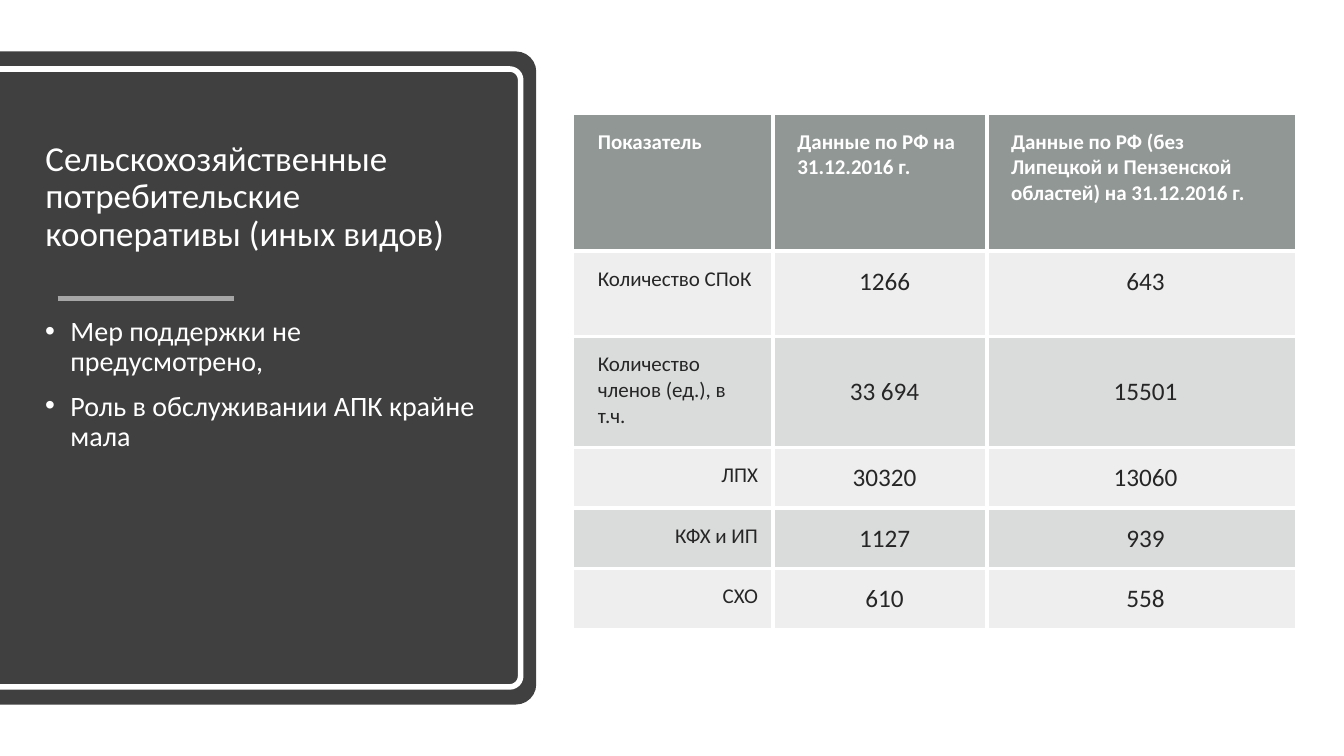
from dataclasses import dataclass

import lxml.etree
import pptx
import pptx.dml.color
import pptx.enum.shapes
import pptx.enum.text
import pptx.oxml.ns
import pptx.util

Pt = pptx.util.Pt
Inches = pptx.util.Inches
ALIGN = pptx.enum.text.PP_ALIGN
ANCHOR = pptx.enum.text.MSO_ANCHOR
qn = pptx.oxml.ns.qn
WIDTH, HEIGHT = Inches(13.33), Inches(7.5)


@dataclass(frozen=True)
class Theme:
    font: str = "Calibri"
    white: str = "FFFFFF"
    panel: str = "404040"
    rule: str = "A6A6A6"
    ink: str = "262626"
    header: str = "636B68"
    band: str = "878E8B"
    header_alpha: int = 70
    band_alphas: tuple[int, int] = (15, 30)
    title_size: int = 25
    body_size: int = 20
    label_size: int = 15
    value_size: int = 18
    heavy: int = 4
    border: int = 3


@dataclass(frozen=True)
class Box:
    left: float
    top: float
    width: float
    height: float

    def emu(self) -> tuple[int, int, int, int]:
        return across(self.left), down(self.top), across(self.width), down(self.height)


@dataclass(frozen=True)
class Panel:
    box: Box
    radius: float
    fill: str | None = None
    line: str | None = None


@dataclass(frozen=True)
class Row:
    height: float
    label: str
    values: tuple[str, str]
    align: ALIGN = ALIGN.LEFT
    anchor: ANCHOR = ANCHOR.TOP


THEME = Theme()
PANELS = (
    Panel(Box(0, 6.8, 39.9, 86.4), 0.038, fill=THEME.panel),
    Panel(Box(-0.26, 9.13, 39, 81.74), 0.021, line=THEME.white),
)
TITLE_BOX = Box(2.63, 14.27, 33.6, 23.73)
RULE_BOX = Box(4.28, 39.47, 13.12, 0)
BODY_BOX = Box(2.63, 41.33, 33.6, 44.4)
TABLE_BOX = Box(42.68, 15.07, 53.7, 67.74)
COLUMNS = (14.85, 15.9, 22.95)
TITLE = "Сельскохозяйственные потребительские кооперативы (иных видов)"
BULLETS = ("Мер поддержки не предусмотрено,", "Роль в обслуживании АПК крайне мала")
ROWS = (
    Row(18.13, "Показатель", ("Данные по РФ на 31.12.2016 г.",
        "Данные по РФ (без Липецкой и Пензенской областей) на 31.12.2016 г.")),
    Row(11.33, "Количество СПоК", ("1266", "643")),
    Row(14.67, "Количество членов (ед.), в т.ч.", ("33 694", "15501"), anchor=ANCHOR.MIDDLE),
    Row(7.87, "ЛПХ", ("30320", "13060"), ALIGN.RIGHT),
    Row(7.87, "КФХ и ИП", ("1127", "939"), ALIGN.RIGHT),
    Row(7.87, "СХО", ("610", "558"), ALIGN.RIGHT),
)


def across(share: float) -> int:
    return round(WIDTH * share / 100)


def down(share: float) -> int:
    return round(HEIGHT * share / 100)


def rgb(color: str) -> pptx.dml.color.RGBColor:
    return pptx.dml.color.RGBColor.from_string(color)


def add_run(p, text: str, size: int, color: str, bold: bool = False) -> None:
    r = p.add_run()
    r.text = text
    r.font.name, r.font.size, r.font.bold = THEME.font, Pt(size), bold
    r.font.color.rgb = rgb(color)


def add_panel(s, panel: Panel) -> None:
    """Draw a panel whose right corners are round by turning a shape a quarter."""
    left, top, width, height = panel.box.emu()
    shift = (width - height) // 2
    sp = s.shapes.add_shape(pptx.enum.shapes.MSO_SHAPE.ROUND_2_SAME_RECTANGLE,
                            left + shift, top - shift, height, width)
    sp.rotation = 90
    sp.shadow.inherit = False
    sp.adjustments[0], sp.adjustments[1] = panel.radius, 0
    if panel.fill:
        sp.fill.solid()
        sp.fill.fore_color.rgb = rgb(panel.fill)
    else:
        sp.fill.background()
    if panel.line:
        sp.line.color.rgb = rgb(panel.line)
        sp.line.width = Pt(THEME.heavy)
    else:
        sp.line.fill.background()


def set_title(s) -> None:
    sp = s.shapes.title
    sp.element.getparent().append(sp.element)
    sp.left, sp.top, sp.width, sp.height = TITLE_BOX.emu()
    tf = sp.text_frame
    tf.word_wrap, tf.vertical_anchor = True, ANCHOR.MIDDLE
    tf.auto_size = pptx.enum.text.MSO_AUTO_SIZE.NONE
    p = tf.paragraphs[0]
    p.alignment, p.line_spacing = ALIGN.LEFT, 0.9
    add_run(p, TITLE, THEME.title_size, THEME.white)


def add_rule(s) -> None:
    left, top, width, _ = RULE_BOX.emu()
    sp = s.shapes.add_connector(pptx.enum.shapes.MSO_CONNECTOR.STRAIGHT,
                                left, top, left + width, top)
    sp.line.color.rgb = rgb(THEME.rule)
    sp.line.width = Pt(THEME.heavy)
    lxml.etree.SubElement(sp.element.spPr, qn("a:effectLst"))


def add_bullets(s) -> None:
    tf = s.shapes.add_textbox(*BODY_BOX.emu()).text_frame
    tf.word_wrap = True
    for i, text in enumerate(BULLETS):
        p = tf.add_paragraph() if i else tf.paragraphs[0]
        p.line_spacing, p.space_before = 0.9, Pt(10)
        ppr = p._p.get_or_add_pPr()
        ppr.set("marL", str(Inches(0.25)))
        ppr.set("indent", str(-Inches(0.25)))
        lxml.etree.SubElement(ppr, qn("a:buFont"), typeface="Arial")
        lxml.etree.SubElement(ppr, qn("a:buChar"), char="•")
        add_run(p, text, THEME.body_size, THEME.white)


def style_cell(cell, edges: list[str], color: str, alpha: int) -> None:
    tcpr = cell._tc.get_or_add_tcPr()
    for edge in edges:
        ln = lxml.etree.SubElement(tcpr, qn(f"a:ln{edge}"), w=str(Pt(THEME.border)))
        fill = lxml.etree.SubElement(ln, qn("a:solidFill"))
        lxml.etree.SubElement(fill, qn("a:srgbClr"), val=THEME.white)
    cell.fill.solid()
    cell.fill.fore_color.rgb = rgb(color)
    clr = tcpr.find(qn("a:solidFill")).find(qn("a:srgbClr"))
    lxml.etree.SubElement(clr, qn("a:alpha"), val=str(alpha * 1000))
    cell.margin_left = Inches(0.24)
    cell.margin_top = cell.margin_right = cell.margin_bottom = Inches(0.15)


def add_table(s) -> None:
    tbl = s.shapes.add_table(len(ROWS), len(COLUMNS), *TABLE_BOX.emu()).table
    tbl.first_row = tbl.horz_banding = False
    for col, width in zip(tbl.columns, COLUMNS):
        col.width = across(width)
    for i, row in enumerate(ROWS):
        tbl.rows[i].height = down(row.height)
        head = i == 0
        for j, text in enumerate((row.label, *row.values)):
            cell = tbl.cell(i, j)
            inner = {"L": j > 0, "R": j < len(COLUMNS) - 1, "T": i > 0, "B": i < len(ROWS) - 1}
            style_cell(cell, [edge for edge, shown in inner.items() if shown],
                       THEME.header if head else THEME.band,
                       THEME.header_alpha if head else THEME.band_alphas[(i - 1) % 2])
            value = j > 0 and not head
            cell.vertical_anchor = row.anchor if value else ANCHOR.TOP
            p = cell.text_frame.paragraphs[0]
            p.alignment = ALIGN.CENTER if value else row.align
            add_run(p, text, THEME.value_size if value else THEME.label_size,
                    THEME.white if head else THEME.ink, head)


def main() -> None:
    prs = pptx.Presentation()
    prs.slide_width, prs.slide_height = WIDTH, HEIGHT
    s = prs.slides.add_slide(prs.slide_layouts[5])
    for panel in PANELS:
        add_panel(s, panel)
    set_title(s)
    add_rule(s)
    add_bullets(s)
    add_table(s)
    prs.save("out.pptx")


if __name__ == "__main__":
    main()
